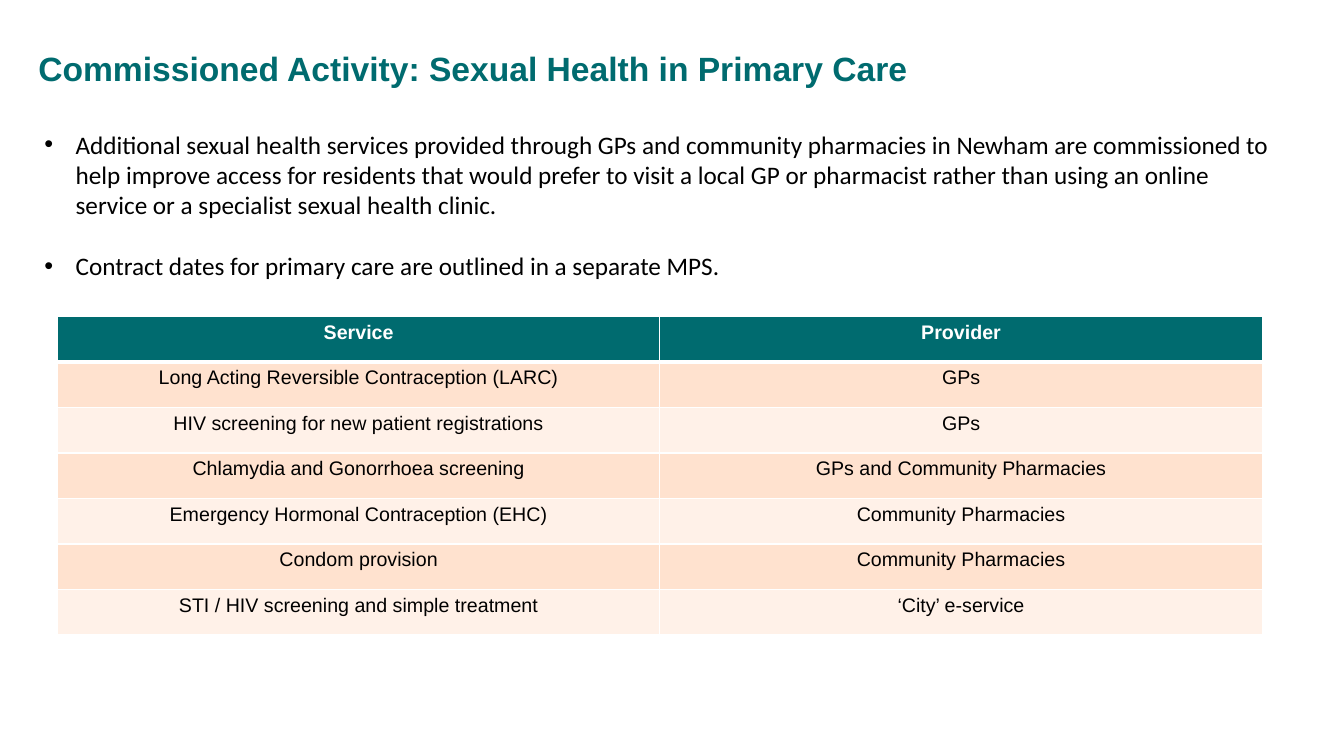
import pptx
import pptx.dml.color
import pptx.enum.text
import pptx.oxml
import pptx.oxml.ns
import pptx.util
from pptx.util import Inches

COLOURS = {
    "teal": "006B6F",
    "white": "FFFFFF",
    "black": "000000",
    "peach": "FFE2CF",
    "pale peach": "FFF1E8",
}
POINTS = [
    "Additional sexual health services provided through GPs and community "
    "pharmacies in Newham are commissioned to help improve access for residents "
    "that would prefer to visit a local GP or pharmacist rather than using an "
    "online service or a specialist sexual health clinic.",
    "Contract dates for primary care are outlined in a separate MPS.",
]
SERVICES = [
    ("Service", "Provider"),
    ("Long Acting Reversible Contraception (LARC)", "GPs"),
    ("HIV screening for new patient registrations", "GPs"),
    ("Chlamydia and Gonorrhoea screening", "GPs and Community Pharmacies"),
    ("Emergency Hormonal Contraception (EHC)", "Community Pharmacies"),
    ("Condom provision", "Community Pharmacies"),
    ("STI / HIV screening and simple treatment", "‘City’ e-service"),
]


def add_run(paragraph, text, font_name, size, colour, bold=False):
    run = paragraph.add_run()
    run.text = text
    run.font.name = font_name
    run.font.size = pptx.util.Pt(size)
    run.font.bold = bold
    run.font.color.rgb = pptx.dml.color.RGBColor.from_string(COLOURS[colour])


def add_border(cell, side, width):
    """Draw a white line on one side (L, R, T or B); call before filling the cell."""
    cell._tc.get_or_add_tcPr().append(pptx.oxml.parse_xml(
        f'<a:ln{side} {pptx.oxml.ns.nsdecls("a")} w="{pptx.util.Pt(width)}">'
        f'<a:solidFill><a:srgbClr val="{COLOURS["white"]}"/></a:solidFill>'
        f'</a:ln{side}>'))


presentation = pptx.Presentation()
presentation.slide_width = Inches(13.33)
presentation.slide_height = Inches(7.5)
slide = presentation.slides.add_slide(presentation.slide_layouts[1])

# Heading
heading = slide.shapes.title
heading.left, heading.top = Inches(0.28), Inches(0.43)
heading.width, heading.height = Inches(11.02), Inches(0.5)
heading.text_frame.auto_size = pptx.enum.text.MSO_AUTO_SIZE.NONE
heading.text_frame.vertical_anchor = pptx.enum.text.MSO_ANCHOR.BOTTOM
heading_line = heading.text_frame.paragraphs[0]
heading_line.alignment = pptx.enum.text.PP_ALIGN.LEFT
heading_line.line_spacing = 0.9
add_run(heading_line, "Commissioned Activity: Sexual Health in Primary Care",
        "Arial", 24, "teal", bold=True)

# Bullet points
summary = slide.placeholders[1]
summary.left, summary.top = Inches(0.34), Inches(1.23)
summary.width, summary.height = Inches(12.4), Inches(1.62)
summary.text_frame.auto_size = pptx.enum.text.MSO_AUTO_SIZE.NONE
for index, point in enumerate(POINTS):
    if index == 0:
        paragraph = summary.text_frame.paragraphs[0]
    else:
        paragraph = summary.text_frame.add_paragraph()
    properties = paragraph._p.get_or_add_pPr()
    properties.set("marL", str(Inches(0.31)))
    properties.set("indent", str(-Inches(0.31)))
    properties.append(pptx.oxml.parse_xml(
        f'<a:buChar {pptx.oxml.ns.nsdecls("a")} char="•"/>'))
    paragraph.space_before = pptx.util.Pt(22 if index else 0)
    add_run(paragraph, point, "Calibri", 18, "black")

# Services and their providers
services = slide.shapes.add_table(
    len(SERVICES), 2, Inches(0.57), Inches(3.14), Inches(11.95), Inches(3.16)).table
for row, entries in enumerate(SERVICES):
    is_header = row == 0
    if is_header:
        fill = "teal"
    else:
        fill = "peach" if row % 2 else "pale peach"
    for column, entry in enumerate(entries):
        cell = services.cell(row, column)
        add_border(cell, "L", 1)
        add_border(cell, "R", 1)
        add_border(cell, "T", 3 if row == 1 else 1)
        add_border(cell, "B", 3 if is_header else 1)
        cell.fill.solid()
        cell.fill.fore_color.rgb = pptx.dml.color.RGBColor.from_string(COLOURS[fill])
        paragraph = cell.text_frame.paragraphs[0]
        paragraph.alignment = pptx.enum.text.PP_ALIGN.CENTER
        add_run(paragraph, entry, "Arial", 14,
                "white" if is_header else "black", bold=is_header)

presentation.save("out.pptx")
